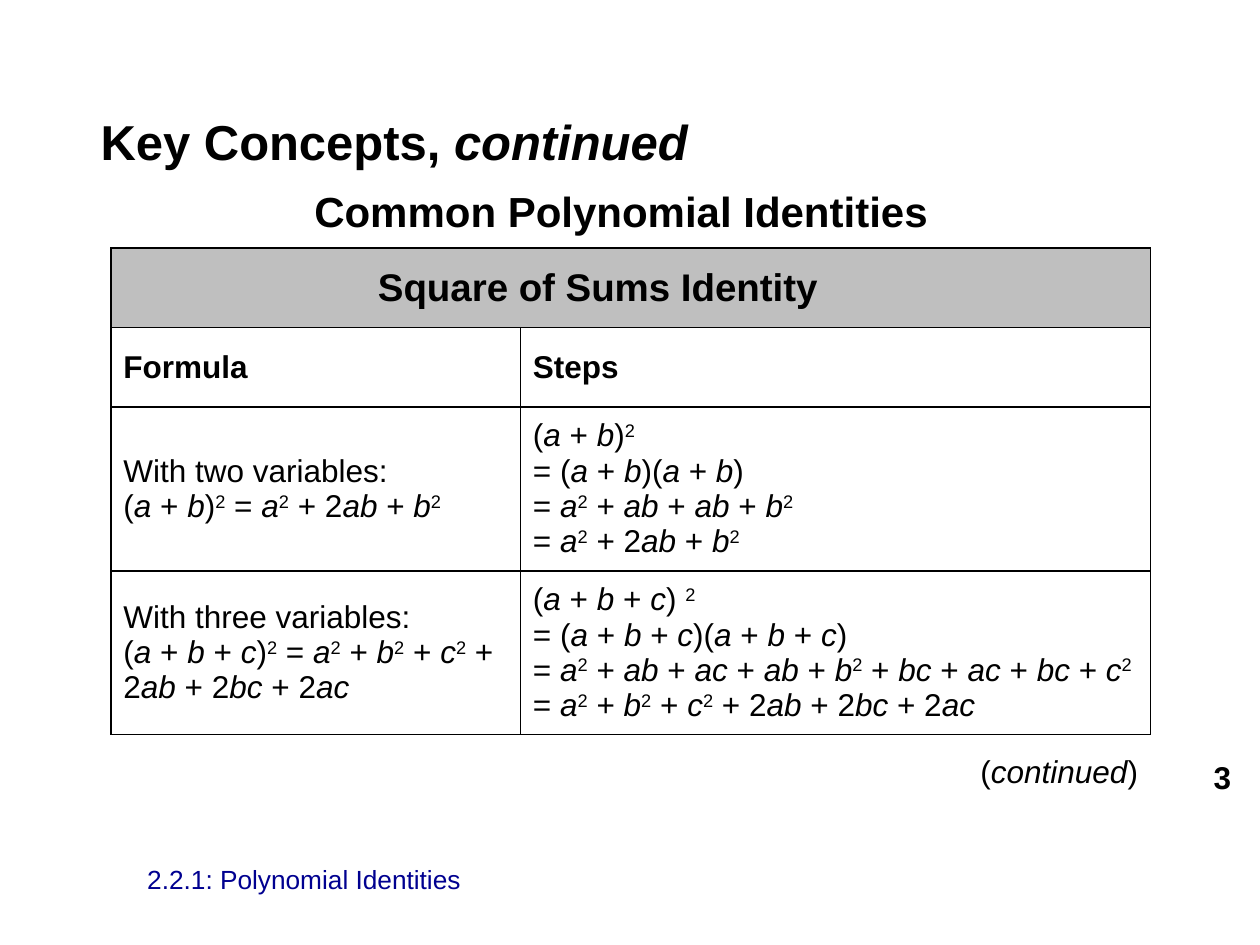
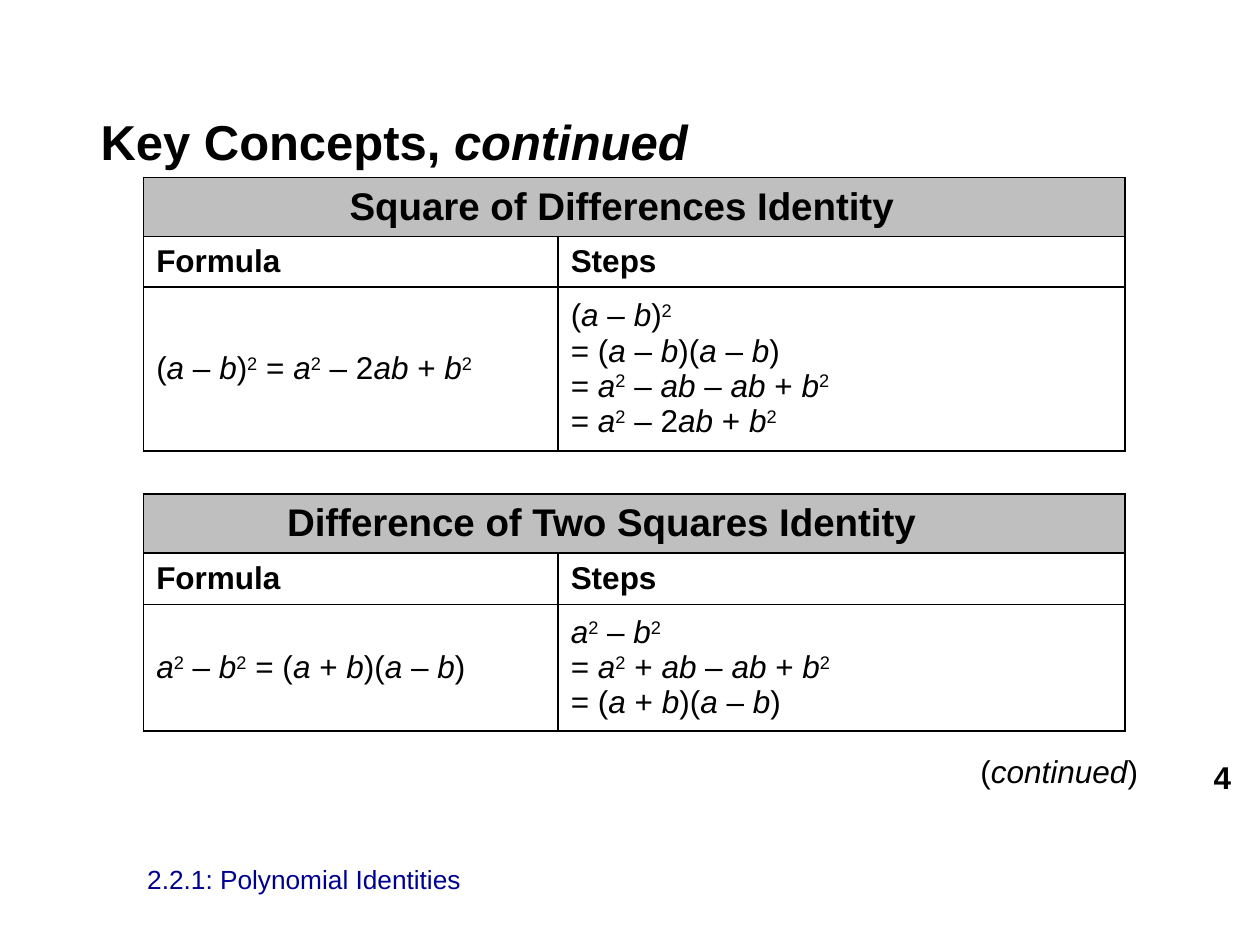
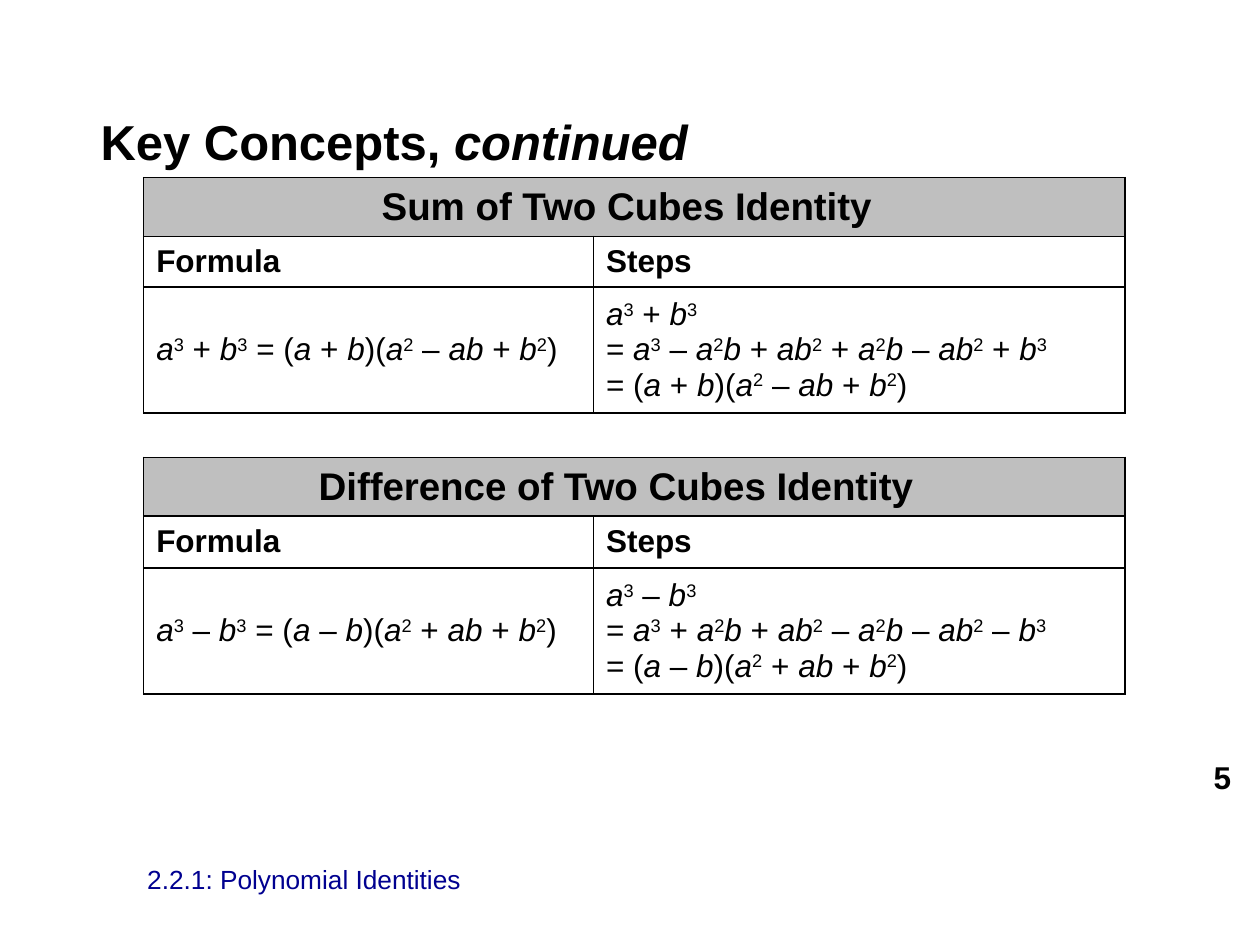
from itertools import groupby

from lxml import etree
from pptx import Presentation
from pptx.dml.color import RGBColor
from pptx.enum import text
from pptx.oxml.ns import qn
from pptx.util import Inches, Pt

LEFT, MID, RIGHT = text.PP_ALIGN.LEFT, text.PP_ALIGN.CENTER, text.PP_ALIGN.RIGHT
POWERS = {"²": "2", "³": "3"}


def tint(code):
    return RGBColor.from_string(code)


def kind(char):
    return "power" if char in POWERS else "letter" if char.isalpha() else "sign"


class Deck:
    font = "Arial"
    ink, navy, gray, white = "000000", "000090", "BFBFBF", "FFFFFF"

    def __init__(self):
        self.prs = Presentation()
        self.prs.slide_width, self.prs.slide_height = Inches(10), Inches(7.5)

    def page(self, number, heading=None):
        self.slide = self.prs.slides.add_slide(self.prs.slide_layouts[6])
        self.title(heading)
        self.label(str(number), 9.07, 6.01, 0.8, 0.31, 18, RIGHT, bold=True)
        self.label("2.2.1: Polynomial Identities", 1.07, 6.83, 6.28, 0.29, 15, color=self.navy)

    def style(self, run, size, bold=False, italic=False, color=ink):
        run.font.name, run.font.size = self.font, Pt(size)
        run.font.bold, run.font.italic = bold, italic
        run.font.color.rgb = tint(color)

    def box(self, left, top, width, height):
        area = self.slide.shapes.add_textbox(*map(Inches, (left, top, width, height)))
        area.text_frame.word_wrap = True
        return area.text_frame

    def title(self, heading):
        frame = self.box(0.7, 0.79, 8.46, 5.38)
        first = frame.paragraphs[0]
        first.line_spacing = 1.1
        for words, italic in (("Key Concepts, ", False), ("continued", True)):
            run = first.add_run()
            run.text = words
            self.style(run, 28, True, italic)
        if heading:
            line = frame.add_paragraph()
            line.text = heading
            line.alignment, line.line_spacing, line.space_before = MID, 1.1, Pt(6)
            self.style(line.runs[0], 24, True)

    def label(self, words, left, top, width, height, size, align=LEFT, bold=False, color=ink):
        frame = self.box(left, top, width, height)
        frame.vertical_anchor = text.MSO_ANCHOR.MIDDLE
        frame.text = words
        frame.paragraphs[0].alignment = align
        self.style(frame.paragraphs[0].runs[0], size, bold, color=color)

    def more(self):
        line = self.box(7.06, 5.92, 2.07, 0.4).paragraphs[0]
        line.alignment = RIGHT
        self.math(line, "(continued)")

    def math(self, line, words):
        for sort, chars in groupby(words, kind):
            run = line.add_run()
            run.text = "".join(POWERS.get(char, char) for char in chars)
            self.style(run, 18, italic=sort == "letter")
            if sort == "power":
                run.font._element.set("baseline", "30000")

    def border(self, cell):
        props = cell._tc.get_or_add_tcPr()
        for index, side in enumerate(("lnL", "lnR", "lnT", "lnB")):
            edge = etree.Element(qn(f"a:{side}"), w=str(Pt(1)))
            fill = etree.SubElement(edge, qn("a:solidFill"))
            etree.SubElement(fill, qn("a:srgbClr"), val=self.ink)
            props.insert(index, edge)

    def head(self, cell, words, size, align=LEFT):
        cell.text = words
        line = cell.text_frame.paragraphs[0]
        line.alignment = align
        self.style(line.runs[0], size, True)

    def lines(self, cell, rows):
        frame = cell.text_frame
        for index, words in enumerate(rows):
            line = frame.add_paragraph() if index else frame.paragraphs[0]
            if words.endswith(":"):
                line.text = words
                self.style(line.runs[0], 18)
            else:
                self.math(line, words)

    def table(self, name, left, top, cols, rows, pad, body):
        area = self.slide.shapes.add_table(
            len(rows), 2, *map(Inches, (left, top, sum(cols), sum(rows))))
        grid = area.table
        grid.first_row = grid.horz_banding = False
        for col, width in zip(grid.columns, cols):
            col.width = Inches(width)
        for row, height in zip(grid.rows, rows):
            row.height = Inches(height)
        for index, cell in enumerate(grid.iter_cells()):
            cell.vertical_anchor = text.MSO_ANCHOR.MIDDLE
            cell.fill.solid()
            cell.fill.fore_color.rgb = tint(self.gray if index < 2 else self.white)
            self.border(cell)
        top_cell = grid.cell(0, 0)
        top_cell.merge(grid.cell(0, 1))
        top_cell.margin_right = Inches(0.1 + pad)
        self.head(top_cell, name, 22, MID)
        for col, words in enumerate(("Formula", "Steps")):
            self.head(grid.cell(1, col), words, 18)
        for row, pair in enumerate(body, 2):
            for col, rows_text in enumerate(pair):
                self.lines(grid.cell(row, col), rows_text)


def main():
    deck = Deck()

    deck.page(3, "Common Polynomial Identities")
    deck.table("Square of Sums Identity", 0.88, 1.97, (3.25, 5), (0.63, 0.63, 1.22, 1.22), 0.52, [
        (["With two variables:", "(a + b)² = a² + 2ab + b²"],
         ["(a + b)²", "= (a + b)(a + b)", "= a² + ab + ab + b²", "= a² + 2ab + b²"]),
        (["With three variables:", "(a + b + c)² = a² + b² + c² + 2ab + 2bc + 2ac"],
         ["(a + b + c) ²", "= (a + b + c)(a + b + c)",
          "= a² + ab + ac + ab + b² + bc + ac + bc + c²",
          "= a² + b² + c² + 2ab + 2bc + 2ac"])])
    deck.more()

    deck.page(4)
    cols = (3.29, 4.5)
    deck.table("Square of Differences Identity", 1.14, 1.41, cols, (0.44, 0.38, 1.22), 0.2, [
        (["(a – b)² = a² – 2ab + b²"],
         ["(a – b)²", "= (a – b)(a – b)", "= a² – ab – ab + b²", "= a² – 2ab + b²"])])
    deck.more()
    deck.table("Difference of Two Squares Identity", 1.14, 3.92, cols, (0.47, 0.41, 1), 0.52, [
        (["a² – b² = (a + b)(a – b)"],
         ["a² – b²", "= a² + ab – ab + b²", "= (a + b)(a – b)"])])

    deck.page(5)
    cols = (3.57, 4.22)
    deck.table("Sum of Two Cubes Identity", 1.14, 1.41, cols, (0.44, 0.38, 0.94), 0.12, [
        (["a³ + b³ = (a + b)(a² – ab + b²)"],
         ["a³ + b³", "= a³ – a²b + ab² + a²b – ab² + b³", "= (a + b)(a² – ab + b²)"])])
    deck.table("Difference of Two Cubes Identity", 1.14, 3.63, cols, (0.44, 0.41, 0.94), 0.29, [
        (["a³ – b³ = (a – b)(a² + ab + b²)"],
         ["a³ – b³", "= a³ + a²b + ab² – a²b – ab² – b³", "= (a – b)(a² + ab + b²)"])])

    deck.prs.save("out.pptx")


if __name__ == "__main__":
    main()
